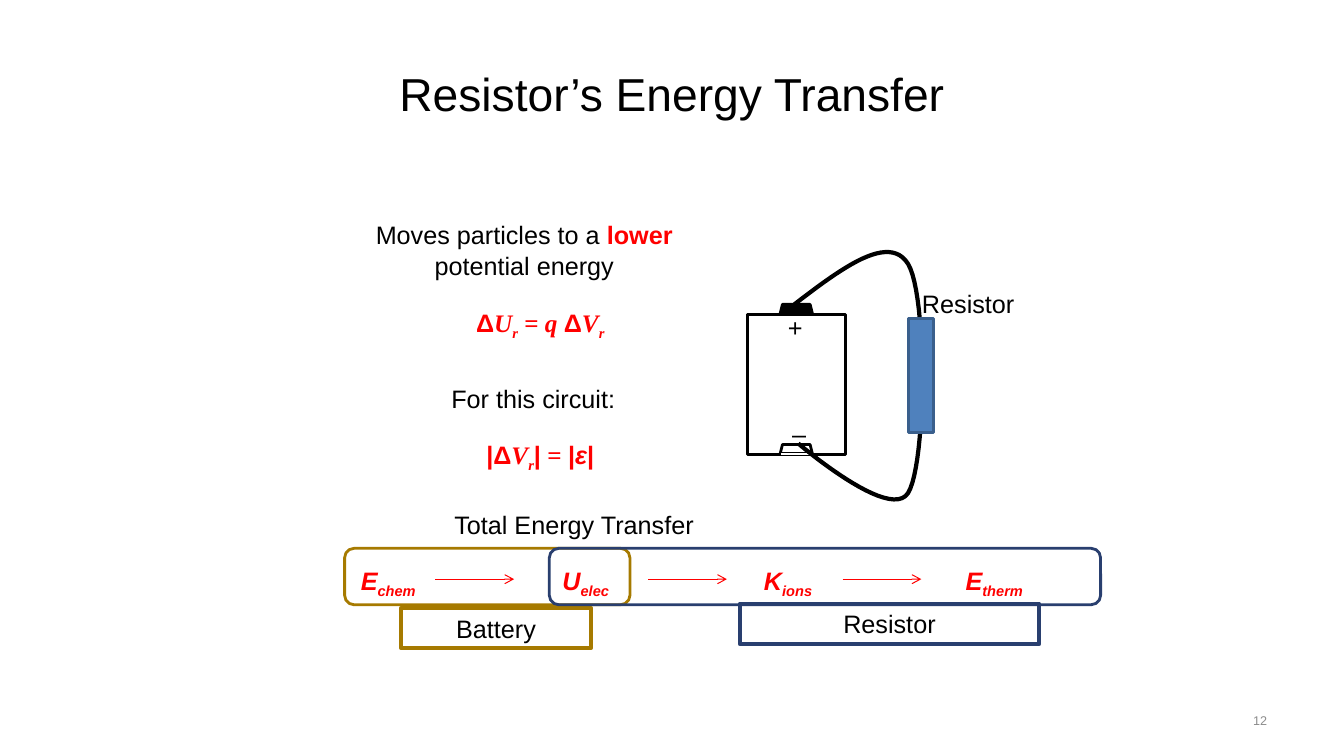
from lxml.etree import Element, SubElement
from pptx import Presentation
from pptx.dml.color import RGBColor
from pptx.enum.shapes import MSO_CONNECTOR, MSO_SHAPE as SHAPE
from pptx.enum.text import MSO_ANCHOR as ANCHOR, PP_ALIGN as ALIGN
from pptx.oxml.ns import qn
from pptx.util import Pt

COLORS = {"black": "000000", "red": "FF0000", "white": "FFFFFF", "gray": "8C8C8C",
          "gold": "A67A00", "navy": "293F6F", "blue": "4F81BD", "steel": "3A5F8C"}

# Run marks: b bold, i italic, s subscript, t Times New Roman, r red
DELTA_U = [("Δ", "b"), ("U", "bit"), ("r", "bits"), (" = ", "bt"), ("q ", "bit"),
           ("Δ", "b"), ("V", "bit"), ("r", "bits")]
DELTA_V = [("|Δ", "b"), ("V", "bit"), ("r", "bits"), ("|", "b"), (" = ", "bt"),
           ("|", "b"), ("ε", "bi"), ("|", "b")]
ENERGY_FORMS = [("E", "chem"), ("U", "elec"), ("K", "ions"), ("E", "therm")]
MOVES = [("Moves particles to a ", ""), ("lower ", "br"), ("potential energy", "")]

# Box (left, top, width, height), runs, color
STATEMENTS = [
    ((232.6, 153.4, 283.7, 51.1), MOVES, "black"),
    ((264.2, 216, 243.4, 28.8), DELTA_U, "red"),
    ((259.2, 270, 243.4, 28.8), [("For this circuit:", "")], "black"),
    ((264.2, 310.3, 243.4, 28.8), DELTA_V, "red"),
    ((259.2, 360, 301.7, 28.8), [("Total Energy Transfer", "")], "black"),
]
CIRCUIT_LABELS = [
    ((560.2, 217.4, 18, 28.8), "+", 90),
    ((558.7, 295.2, 18.7, 28.8), "–", 0),
    ((650.9, 202.3, 81.4, 28.8), "Resistor", 0),
]
WIRE_START = (567.4, 217.4)
WIRE_CURVES = [
    ((601.2, 191.5), (635, 166.3), (648.7, 188.6)),
    ((662.4, 211.7), (661.7, 330.5), (648.7, 352.1)),
    ((635.8, 373), (570.2, 316.8), (570.2, 316.8)),
]
WIRE_UNITS = 100  # drawing units per point
CHAIN = (250.6, 400.3, 565.2, 28.8)
CHAIN_STEP = 144
ARROW_LEFTS, ARROW_Y, ARROW_LENGTH = (311, 463, 601.9), 413.7, 56.2
# Name, color, rounded frame, label box
STAGES = [
    ("Battery", "gold", (246.2, 391.7, 203.8, 40.3), (286.6, 434.2, 135.4, 28.8)),
    ("Resistor", "navy", (392.4, 391.7, 393.8, 40.3), (528.5, 431.3, 213.8, 28.8)),
]

deck = Presentation()
deck.slide_width, deck.slide_height = Pt(960), Pt(540)
slide = deck.slides.add_slide(deck.slide_layouts[6])
shapes = slide.shapes


def rgb(name):
    return RGBColor.from_string(COLORS[name])


def paint(shape, fill=None, line=None, width=2):
    shape.shadow.inherit = False
    if fill:
        shape.fill.solid()
        shape.fill.fore_color.rgb = rgb(fill)
    else:
        shape.fill.background()
    if line:
        shape.line.color.rgb = rgb(line)
        shape.line.width = Pt(width)
    else:
        shape.line.fill.background()
    return shape


def add_box(kind, box, **look):
    return paint(shapes.add_shape(kind, *map(Pt, box)), **look)


def write(shape, runs, color="black", size=18, align=ALIGN.CENTER, anchor=ANCHOR.TOP):
    frame = shape.text_frame
    frame.word_wrap = True
    frame.vertical_anchor = anchor
    paragraph = frame.paragraphs[0]
    paragraph.alignment = align
    paragraph.font.name, paragraph.font.size = "Arial", Pt(size)
    paragraph.font.color.rgb = rgb(color)
    for text, marks in runs:
        run = paragraph.add_run()
        run.text = text
        if "b" in marks:
            run.font.bold = True
        if "i" in marks:
            run.font.italic = True
        if "t" in marks:
            run.font.name = "Times New Roman"
        if "r" in marks:
            run.font.color.rgb = rgb("red")
        if "s" in marks:
            run._r.get_or_add_rPr().set("baseline", "-25000")
    return paragraph


def add_text(box, runs, **style):
    textbox = shapes.add_textbox(*map(Pt, box))
    write(textbox, runs, **style)
    return textbox


def set_tabs(paragraph, positions):
    tabs = Element(qn("a:tabLst"))
    for position in positions:
        SubElement(tabs, qn("a:tab"), pos=str(Pt(position)), algn="l")
    paragraph._p.get_or_add_pPr().insert(0, tabs)


def add_line(x1, x2, y, color, width, arrow=False):
    line = shapes.add_connector(MSO_CONNECTOR.STRAIGHT, Pt(x1), Pt(y), Pt(x2), Pt(y))
    line.line.color.rgb = rgb(color)
    line.line.width = Pt(width)
    if arrow:
        SubElement(line.line._get_or_add_ln(), qn("a:tailEnd"), type="arrow")
    SubElement(line._element.spPr, qn("a:effectLst"))


def bezier(start, c1, c2, end, steps=24):
    """Return points along a cubic curve, without its start."""
    points = []
    for step in range(1, steps + 1):
        t = step / steps
        u = 1 - t
        points.append(tuple(u**3 * a + 3 * u * u * t * b + 3 * u * t * t * c + t**3 * d
                            for a, b, c, d in zip(start, c1, c2, end)))
    return points


def add_wire():
    points = [WIRE_START]
    for curve in WIRE_CURVES:
        points += bezier(points[-1], *curve)
    first, *rest = [(x * WIRE_UNITS, y * WIRE_UNITS) for x, y in points]
    builder = shapes.build_freeform(*first, scale=Pt(1) / WIRE_UNITS)
    builder.add_line_segments(rest, close=False)
    paint(builder.convert_to_shape(), line="black", width=3)


add_text((48, 21.6, 864, 90), [("Resistor’s Energy Transfer", "")], size=33,
         anchor=ANCHOR.MIDDLE)

# Circuit
add_box(SHAPE.RECTANGLE, (534.2, 224.6, 69.8, 100.1), line="black")
add_box(SHAPE.TRAPEZOID, (557.3, 317.5, 23, 6.5), line="black")
add_line(558, 579.6, 324.3, "white", 2)
add_box(SHAPE.TRAPEZOID, (557.3, 217.4, 23, 6.5), fill="black", line="black")
add_wire()
add_box(SHAPE.RECTANGLE, (648.7, 227.5, 18, 81.4), fill="blue", line="steel")
for box, label, rotation in CIRCUIT_LABELS:
    add_text(box, [(label, "")]).rotation = rotation

for box, runs, color in STATEMENTS:
    add_text(box, runs, color=color)

# Energy chain: two tabs lead to each next form
chain_runs = []
for position, (symbol, form) in enumerate(ENERGY_FORMS):
    chain_runs += [("\t\t" * (position > 0) + symbol, "bi"), (form, "bis")]
chain = write(add_box(SHAPE.RECTANGLE, CHAIN, fill="white"), chain_runs, color="red",
              align=ALIGN.LEFT)
set_tabs(chain, [CHAIN_STEP / 2 * stop for stop in range(1, 2 * len(ENERGY_FORMS) - 1)])
for left in ARROW_LEFTS:
    add_line(left, left + ARROW_LENGTH, ARROW_Y, "red", 0.75, arrow=True)
for name, color, frame_box, label_box in STAGES:
    add_box(SHAPE.ROUNDED_RECTANGLE, frame_box, line=color)
    write(add_box(SHAPE.RECTANGLE, label_box, line=color, width=3), [(name, "")])

add_text((688.3, 500.4, 223.9, 28.8), [("12", "")], color="gray", size=9,
         align=ALIGN.RIGHT, anchor=ANCHOR.MIDDLE)

deck.save("out.pptx")
